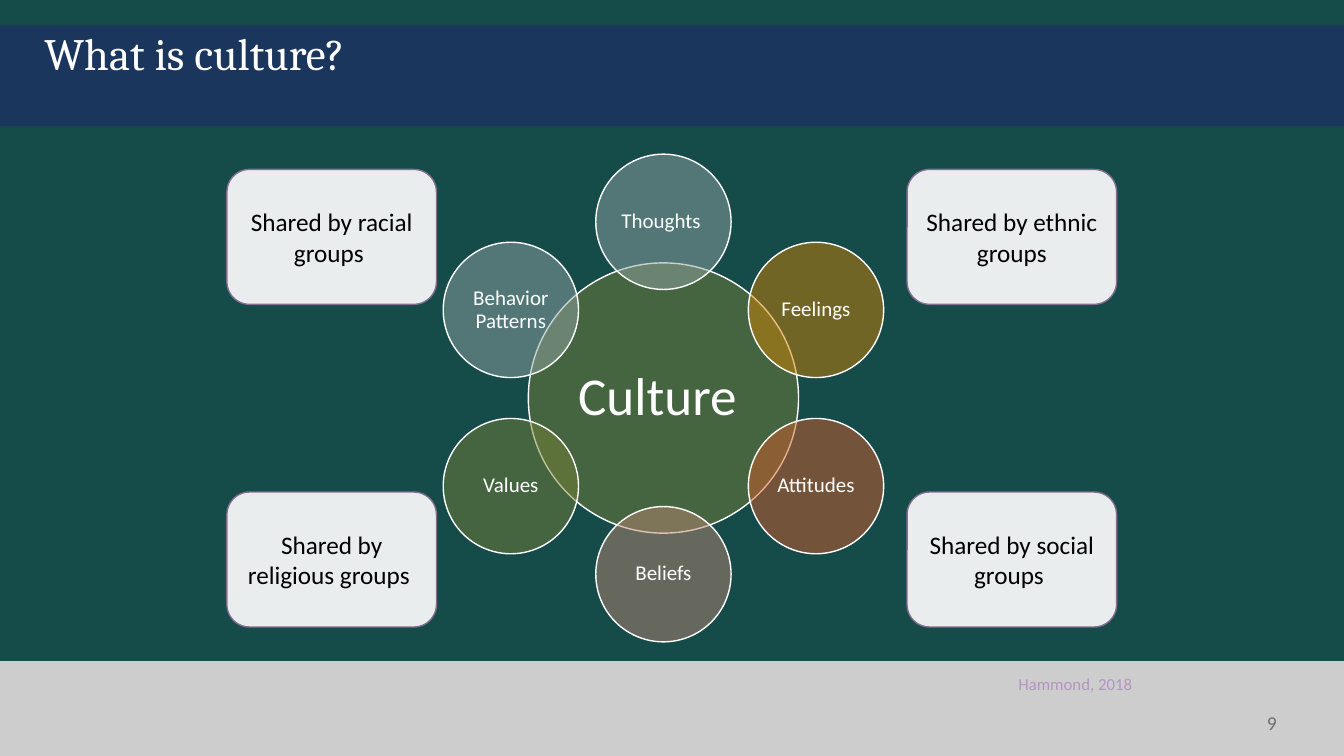
from math import cos, radians, sin

from lxml import etree
from pptx import Presentation
from pptx.dml.color import RGBColor
from pptx.enum import shapes, text
from pptx.oxml import ns
from pptx.util import Cm, Pt

WHITE = RGBColor(0xFF, 0xFF, 0xFF)
BLACK = RGBColor(0, 0, 0)
BASE = RGBColor(0x0B, 0x28, 0x27)
TEAL = RGBColor(0x15, 0x4C, 0x4A)
NAVY = RGBColor(0x1B, 0x36, 0x5D)
SILVER = RGBColor(0xCD, 0xCD, 0xCD)
GRAY = RGBColor(0x6E, 0x70, 0x73)
OLIVE = RGBColor(0x76, 0x7E, 0x37)
MIST = RGBColor(0x8F, 0xA3, 0xA3)
AMBER = RGBColor(0xCE, 0x7F, 0x01)
RUST = RGBColor(0xD1, 0x5A, 0x29)
CLAY = RGBColor(0xB8, 0x84, 0x70)
PALE = RGBColor(0xE9, 0xED, 0xED)
PLUM = RGBColor(0x85, 0x6E, 0x90)
LILAC = RGBColor(0xB4, 0x95, 0xC2)

KIND = shapes.MSO_SHAPE
ALIGN = text.PP_ALIGN
ANCHOR = text.MSO_ANCHOR
WIDTH, HEIGHT = 33.87, 19.05


def write(shape, words, size, color, font="Calibri", align=ALIGN.CENTER,
          anchor=ANCHOR.MIDDLE, inset=None, spacing=None):
    frame = shape.text_frame
    frame.word_wrap = True
    frame.vertical_anchor = anchor
    if inset is not None:
        frame.margin_left = frame.margin_right = Cm(inset)
        frame.margin_top = frame.margin_bottom = Cm(inset)
    para = frame.paragraphs[0]
    para.text = words
    para.alignment = align
    para.line_spacing = spacing
    para.font.name = font
    para.font.size = Pt(size)
    para.font.color.rgb = color


def draw(slide, kind, left, top, width, height, fill, line=None):
    shape = slide.shapes.add_shape(kind, Cm(left), Cm(top), Cm(width), Cm(height))
    shape.shadow.inherit = False
    shape.fill.solid()
    shape.fill.fore_color.rgb = fill
    if line is None:
        shape.line.fill.background()
    else:
        shape.line.color.rgb = line
        shape.line.width = Pt(1)
    return shape


def label(slide, left, top, width, height, *args, **style):
    box = slide.shapes.add_textbox(Cm(left), Cm(top), Cm(width), Cm(height))
    write(box, *args, **style)


def circle(slide, x, y, size, fill, words, points, inset):
    shape = draw(slide, KIND.OVAL, x - size / 2, y - size / 2, size, size, fill, WHITE)
    # Half transparent fill
    color = shape.fill._xPr.find(ns.qn("a:solidFill"))[0]
    etree.SubElement(color, ns.qn("a:alpha"), val="50000")
    write(shape, words, points, WHITE, inset=inset, spacing=0.9)


def card(slide, left, top, words):
    shape = draw(slide, KIND.ROUNDED_RECTANGLE, left, top, 5.28, 3.4, PALE, PLUM)
    write(shape, words, 18, BLACK)


def main():
    deck = Presentation()
    deck.slide_width, deck.slide_height = Cm(WIDTH), Cm(HEIGHT)
    slide = deck.slides.add_slide(deck.slide_layouts[6])
    slide.background.fill.solid()
    slide.background.fill.fore_color.rgb = BASE

    # Bands
    for top, height, fill in [(0, HEIGHT, TEAL), (0.64, 2.54, NAVY), (16.66, 2.39, SILVER)]:
        draw(slide, KIND.RECTANGLE, 0, top, WIDTH, height, fill)

    # Title and page number
    label(slide, 1.12, 0.64, 30.76, 2.54, "What is culture?", 32, WHITE, font="Cambria",
          align=ALIGN.LEFT, anchor=ANCHOR.TOP, inset=0)
    label(slide, 30.48, 17.65, 1.7, 1.02, "9", 14, GRAY,
          align=ALIGN.RIGHT, inset=0, spacing=1.2)

    # Culture and its ring of parts, clockwise from the top
    x, y, radius = 16.72, 10.03, 4.44
    circle(slide, x, y, 6.81, OLIVE, "Culture ", 38, 0.13)
    ring = [("Thoughts ", MIST), ("Feelings", AMBER), ("Attitudes", RUST),
            ("Beliefs", CLAY), ("Values", OLIVE), ("Behavior Patterns", MIST)]
    for i, (words, fill) in enumerate(ring):
        turn = radians(360 / len(ring) * i)
        circle(slide, x + radius * sin(turn), y - radius * cos(turn), 3.41,
               fill, words, 15, 0.05)

    # Corner cards
    cards = [(5.72, ["racial groups ", "religious groups "]),
             (22.86, ["ethnic groups", "social groups "])]
    for left, groups in cards:
        for top, group in zip([4.27, 12.4], groups):
            card(slide, left, top, "Shared by " + group)

    # Citation
    label(slide, 24.66, 16.84, 4.88, 0.77, "Hammond, 2018", 12, LILAC, anchor=ANCHOR.TOP)

    deck.save("out.pptx")


if __name__ == "__main__":
    main()
